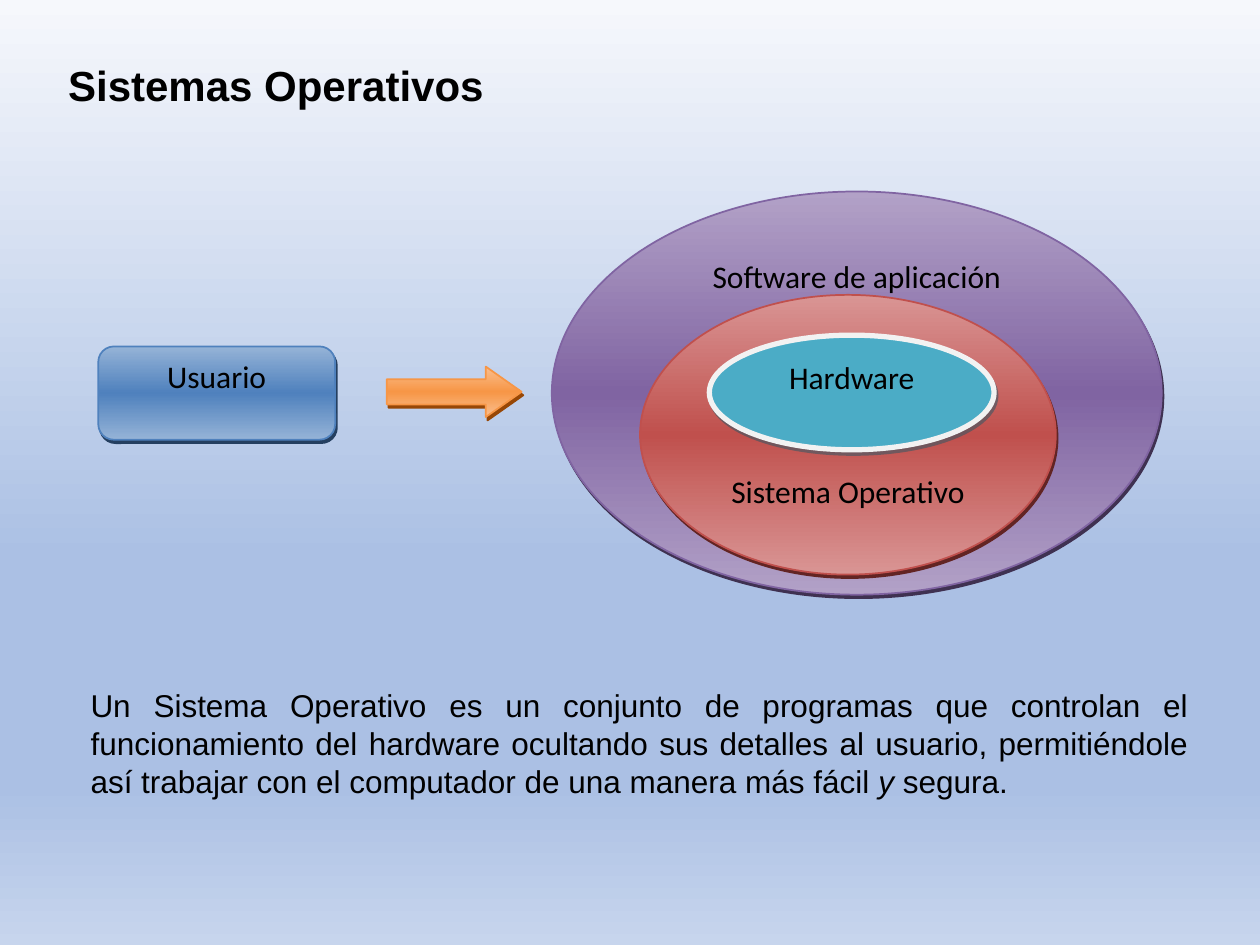
from dataclasses import dataclass

import pptx
import pptx.dml.color
import pptx.enum.shapes
import pptx.enum.text
import pptx.oxml
import pptx.oxml.ns
import pptx.util

Inches, Pt = pptx.util.Inches, pptx.util.Pt
RGB = pptx.dml.color.RGBColor.from_string
qn = pptx.oxml.ns.qn
SHAPE = pptx.enum.shapes.MSO_SHAPE
ALIGN = pptx.enum.text.PP_ALIGN
ANCHOR = pptx.enum.text.MSO_ANCHOR


@dataclass(frozen=True)
class Theme:
    text: str = "000000"
    heading_font: str = "Arial"
    label_font: str = "Calibri"
    title_size: int = 24
    body_size: int = 18
    background: tuple = ((0, "F6F8FC"), (59, "ABC0E4"), (83, "ABC0E4"), (100, "C7D5ED"))
    # Each palette: edge tint, core colour, shadow
    blue: tuple = ("95B3D7", "4F81BD", "243F60")
    orange: tuple = ("FABF8F", "F79646", "974706")
    purple: tuple = ("B2A1C7", "8064A2", "3F3151")
    red: tuple = ("D99594", "C0504D", "622423")
    teal: str = "4BACC6"
    teal_shadow: str = "205867"
    teal_line: str = "F2F2F2"


THEME = Theme()


def add_color(parent, color):
    clr = pptx.oxml.parse_xml(f'<a:srgbClr {pptx.oxml.ns.nsdecls("a")} val="{color}"/>')
    parent.append(clr)
    return clr


def add_node(parent, tag, **attributes):
    node = parent.makeelement(qn(tag), {k: str(v) for k, v in attributes.items()})
    parent.append(node)
    return node


def fill_gradient(fill, element, stops):
    """Fill from top to bottom with (percent, colour) stops."""
    fill.gradient()
    fill.gradient_angle = 270
    stop_list = element.find(".//" + qn("a:gsLst"))
    for stop in list(stop_list):
        stop_list.remove(stop)
    for percent, color in stops:
        add_color(add_node(stop_list, "a:gs", pos=percent * 1000), color)


def add_shadow(sp, color, opacity=100):
    sp.shadow.inherit = False
    effects = sp._element.spPr.find(qn("a:effectLst"))
    shadow = add_node(effects, "a:outerShdw", blurRad=0, dist=int(Pt(2.2)),
                      dir=63 * 60000, algn="ctr", rotWithShape=0)
    clr = add_color(shadow, color)
    if opacity < 100:
        add_node(clr, "a:alpha", val=opacity * 1000)


def add_run(p, text, font, size, bold=None, italic=None):
    r = p.add_run()
    r.text = text
    r.font.name, r.font.size = font, Pt(size)
    r.font.bold, r.font.italic = bold, italic
    r.font.color.rgb = RGB(THEME.text)


def add_shape(s, kind, x, y, w, h, label="", label_top=0.05):
    sp = s.shapes.add_shape(kind, Inches(x), Inches(y), Inches(w), Inches(h))
    tf = sp.text_frame
    tf.word_wrap = True
    tf.vertical_anchor = ANCHOR.TOP
    tf.margin_top = Inches(label_top)
    if label:
        p = tf.paragraphs[0]
        p.alignment = ALIGN.CENTER
        p.space_after = Pt(10)
        add_run(p, label, THEME.label_font, THEME.body_size)
    return sp


def add_glossy_shape(s, kind, palette, *box, **label):
    edge, core, shadow = palette
    sp = add_shape(s, kind, *box, **label)
    fill_gradient(sp.fill, sp._element.spPr, ((0, edge), (50, core), (100, edge)))
    sp.line.color.rgb = RGB(core)
    sp.line.width = Pt(1)
    add_shadow(sp, shadow)
    return sp


def add_text_box(s, x, y, w, h):
    tf = s.shapes.add_textbox(Inches(x), Inches(y), Inches(w), Inches(h)).text_frame
    tf.word_wrap = True
    return tf


def add_title(s, x, y, w, h):
    p = add_text_box(s, x, y, w, h).paragraphs[0]
    p.alignment = ALIGN.CENTER
    p.line_spacing = 0.9
    p.space_before = Pt(10)
    add_run(p, "Sistemas Operativos", THEME.heading_font, THEME.title_size, bold=True)


def add_user(s, x, y):
    """User box with the arrow that leads to the layers."""
    add_glossy_shape(s, SHAPE.ROUNDED_RECTANGLE, THEME.blue, x, y, 1.88, 0.74,
                     label="Usuario")
    arrow = add_glossy_shape(s, SHAPE.RIGHT_ARROW, THEME.orange,
                             x + 2.29, y + 0.16, 1.07, 0.4)
    arrow.adjustments[1] = 0.71


def add_layers(s, x, y):
    """Nested ellipses, from application software in to hardware."""
    add_glossy_shape(s, SHAPE.OVAL, THEME.purple, x, y, 4.84, 3.2,
                     label="Software de aplicación")
    add_glossy_shape(s, SHAPE.OVAL, THEME.red, x + 0.7, y + 0.82, 3.3, 2.22,
                     label="Sistema Operativo", label_top=1.08)
    hardware = add_shape(s, SHAPE.OVAL, x + 1.25, y + 1.14, 2.26, 0.91, label="Hardware")
    hardware.fill.solid()
    hardware.fill.fore_color.rgb = RGB(THEME.teal)
    hardware.line.color.rgb = RGB(THEME.teal_line)
    hardware.line.width = Pt(3)
    add_shadow(hardware, THEME.teal_shadow, opacity=50)


def add_definition(s, x, y, w, h):
    tf = add_text_box(s, x, y, w, h)
    tf.vertical_anchor = ANCHOR.MIDDLE
    p = tf.paragraphs[0]
    p.alignment = ALIGN.JUSTIFY
    for text, italic in (
        ("Un Sistema Operativo es un conjunto de programas que controlan el "
         "funcionamiento del hardware ocultando sus detalles al usuario, "
         "permitiéndole así trabajar con el computador de una manera más fácil ", False),
        ("y ", True),
        ("segura.", False),
    ):
        add_run(p, text, THEME.heading_font, THEME.body_size, italic=italic)


def main():
    prs = pptx.Presentation()
    prs.slide_width, prs.slide_height = Inches(10), Inches(7.5)
    s = prs.slides.add_slide(prs.slide_layouts[6])
    fill_gradient(s.background.fill, s._element, THEME.background)
    add_title(s, 0, 0.47, 4.38, 0.55)
    add_definition(s, 0.62, 5.39, 8.91, 1.01)
    add_user(s, 0.78, 2.75)
    add_layers(s, 4.38, 1.52)
    prs.save("out.pptx")


if __name__ == "__main__":
    main()
